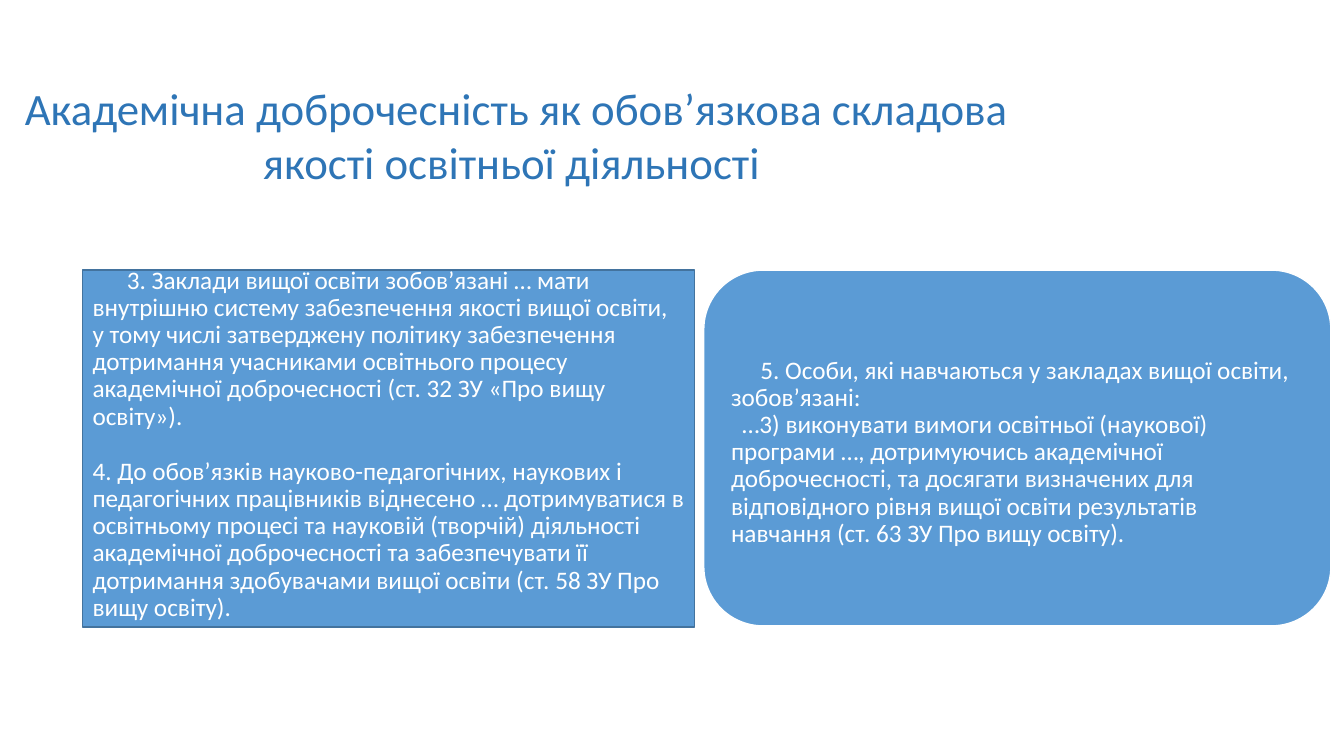
from pptx import Presentation
from pptx.dml.color import RGBColor
from pptx.enum.shapes import MSO_SHAPE
from pptx.enum.text import MSO_ANCHOR, PP_ALIGN
from pptx.util import Inches, Pt

DUTIES = [
    ("3. Заклади вищої освіти зобов’язані …\u00a0мати внутрішню систему "
     "забезпечення якості вищої освіти, у тому числі затверджену політику "
     "забезпечення дотримання учасниками освітнього процесу академічної "
     "доброчесності (ст. 32 ЗУ «Про вищу освіту»).", 0.34, 0),
    ("4. До обов’язків науково-педагогічних, наукових і педагогічних "
     "працівників віднесено … дотримуватися в освітньому процесі та науковій "
     "(творчій) діяльності академічної доброчесності та забезпечувати її "
     "дотримання здобувачами вищої освіти (ст. 58 ЗУ Про вищу освіту).", 0, 19.8),
]
LEARNERS = [
    ("5. Особи, які навчаються у закладах вищої освіти, зобов’язані:", 0.29, 0),
    ("…3) виконувати вимоги освітньої (наукової) програми …, дотримуючись "
     "академічної доброчесності, та досягати визначених для відповідного рівня "
     "вищої освіти результатів навчання (ст. 63 ЗУ Про вищу освіту).", 0.11, 0),
]


def color(code):
    """Turn a hex string into a colour."""
    return RGBColor.from_string(code)


def style(para, size, code, align):
    """Set the font and alignment of a paragraph."""
    para.alignment = align
    para.font.name = "Calibri"
    para.font.size = Pt(size)
    para.font.color.rgb = color(code)


def add_title(slide, text, box):
    """Add the centred heading."""
    frame = slide.shapes.add_textbox(*map(Inches, box)).text_frame
    frame.word_wrap = True
    frame.text = text
    style(frame.paragraphs[0], 32, "2E75B6", PP_ALIGN.CENTER)


def add_panel(slide, kind, box, edge, top, bottom, items):
    """Add a filled panel with items of text, indent and space before."""
    panel = slide.shapes.add_shape(kind, *map(Inches, box))
    panel.shadow.inherit = False
    panel.fill.solid()
    panel.fill.fore_color.rgb = color("5B9BD5")
    panel.line.color.rgb = color(edge)
    panel.line.width = Pt(1)
    frame = panel.text_frame
    frame.word_wrap = True
    frame.vertical_anchor = MSO_ANCHOR.MIDDLE
    frame.margin_left = frame.margin_right = Inches(0.1)
    frame.margin_top, frame.margin_bottom = Inches(top), Inches(bottom)
    for i, (text, indent, gap) in enumerate(items):
        para = frame.add_paragraph() if i else frame.paragraphs[0]
        para.text = text
        para._p.get_or_add_pPr().set("indent", str(Inches(indent)))
        para.line_spacing = 0.9
        para.space_before = Pt(gap)
        style(para, 18, "FFFFFF", PP_ALIGN.LEFT)


def main():
    """Build and save the slide."""
    deck = Presentation()
    deck.slide_width, deck.slide_height = Inches(13.33), Inches(7.5)
    slide = deck.slides.add_slide(deck.slide_layouts[6])
    add_panel(slide, MSO_SHAPE.RECTANGLE, (0.82, 2.68, 6.07, 3.54),
              "43739E", 0.05, 0.13, DUTIES)
    add_panel(slide, MSO_SHAPE.ROUNDED_RECTANGLE, (6.98, 2.68, 6.22, 3.53),
              "FFFFFF", 0.19, 0.1, LEARNERS)
    add_title(slide, "Академічна доброчесність як обов’язкова складова "
              "якості освітньої діяльності ", (0, 0.75, 10.25, 1.18))
    deck.save("out.pptx")


if __name__ == "__main__":
    main()
